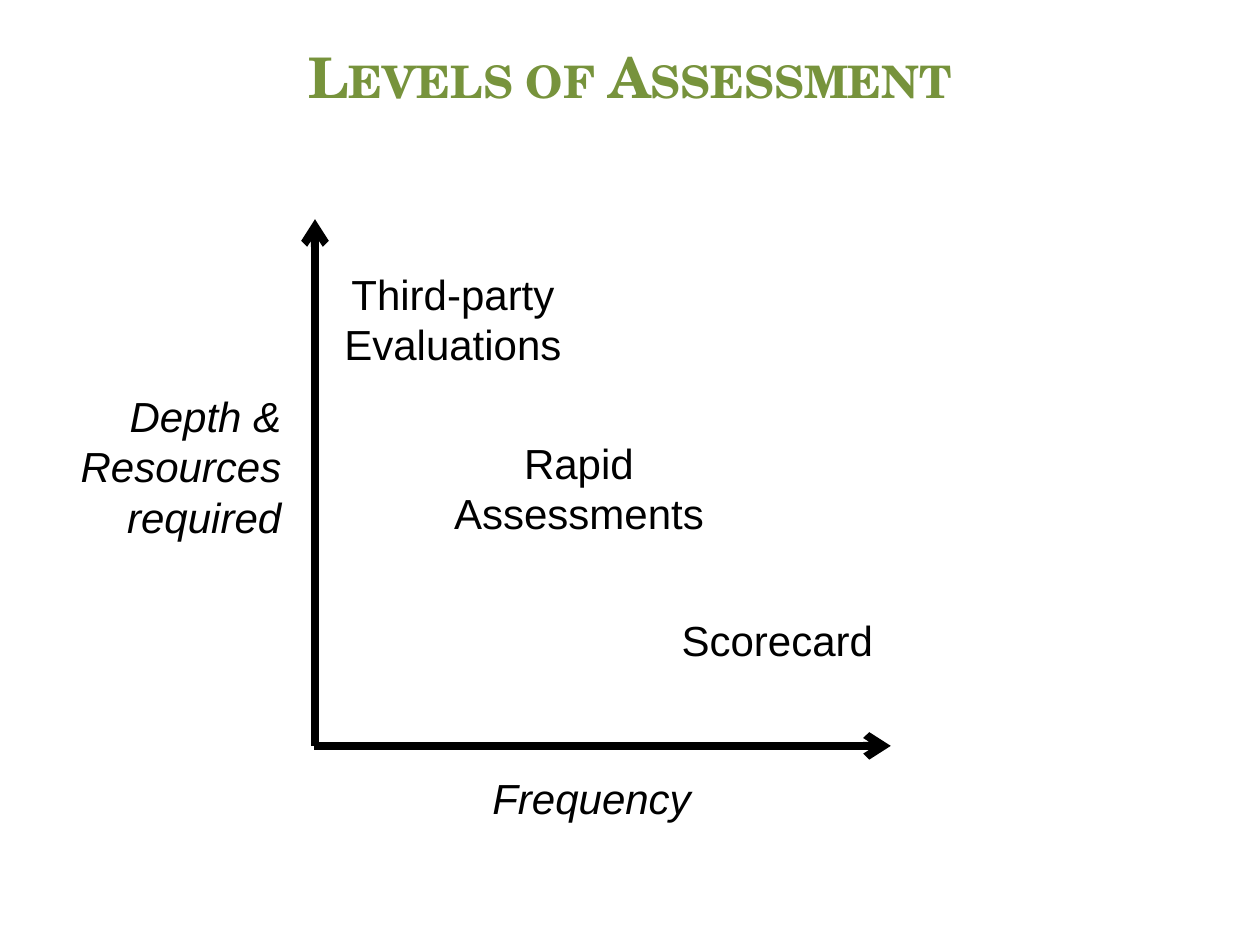
from dataclasses import dataclass

from pptx import Presentation
from pptx.dml.color import RGBColor as Color
from pptx.enum.shapes import MSO_CONNECTOR as Connector
from pptx.enum.text import MSO_ANCHOR as Anchor, MSO_AUTO_SIZE as AutoSize, PP_ALIGN as Align
from pptx.oxml.ns import qn
from pptx.util import Inches, Pt
from lxml.etree import SubElement


@dataclass(frozen=True)
class Theme:
    ink: Color = Color(0x00, 0x00, 0x00)
    green: Color = Color(0x77, 0x93, 0x3C)
    title_font: str = "TeX Gyre Schola"
    body_font: str = "Arial"
    title_size: Pt = Pt(32)
    body_size: Pt = Pt(24)
    axis_width: Pt = Pt(4.5)


@dataclass(frozen=True)
class Box:
    left: float
    top: float
    width: float
    height: float

    def inner(self, left, top, width, height):
        return Box(self.left + left, self.top + top, width, height)

    def placement(self):
        return {name: cells(getattr(self, name)) for name in ("left", "top", "width", "height")}


THEME = Theme()
COLUMNS, ROWS, CELL = 40, 30, 0.25
TITLE_BOX = Box(0, 0, COLUMNS, 3.68)
CHART_BOX = Box(10, 6.96, 18.28, 16.72)

LEVELS = [
    ("Third-party Evaluations", (0.32, 1.36, 8.12, 4.72)),
    ("Rapid Assessments", (3.44, 6.72, 9.88, 3.32)),
    ("Scorecard", (10.68, 12.36, 8, 2.68)),
]
AXIS_NAMES = [
    ("Depth & Resources required", (-8.24, 5.24, 7.56, 5.24)),
    ("Frequency", (4.76, 17.36, 7.56, 2)),
]
LEVEL_FORMAT = {"alignment": Align.CENTER, "space_before": Pt(0), "space_after": Pt(4)}
AXIS_FORMAT = {"alignment": Align.RIGHT}


def cells(count):
    return Inches(count * CELL)


def apply(target, values):
    for name, value in values.items():
        setattr(target, name, value)


def format_font(font, color, **values):
    apply(font, values)
    font.color.rgb = color


def add_title(slide, box, text):
    title = slide.shapes.title
    apply(title, box.placement())
    frame = title.text_frame
    apply(frame, {"text": text, "vertical_anchor": Anchor.BOTTOM,
                  "word_wrap": True, "auto_size": AutoSize.NONE})
    paragraph = frame.paragraphs[0]
    paragraph.alignment = Align.CENTER
    run = paragraph.runs[0]
    format_font(run.font, THEME.green, name=THEME.title_font, size=THEME.title_size, bold=True)
    run.font._element.set("cap", "small")


def add_label(slide, box, text, paragraph_format, italic, auto_size):
    label = slide.shapes.add_textbox(**box.placement())
    frame = label.text_frame
    apply(frame, {"text": text, "word_wrap": True, "auto_size": auto_size})
    paragraph = frame.paragraphs[0]
    apply(paragraph, paragraph_format)
    format_font(paragraph.runs[0].font, THEME.ink,
                name=THEME.body_font, size=THEME.body_size, italic=italic)


def add_axis(slide, start, end):
    axis = slide.shapes.add_connector(
        Connector.STRAIGHT, *(cells(value) for value in (*start, *end)))
    axis.line.width = THEME.axis_width
    axis.line.color.rgb = THEME.ink
    properties = axis._element.spPr
    SubElement(properties.find(qn("a:ln")), qn("a:tailEnd"), type="arrow")
    SubElement(properties, qn("a:effectLst"))


def add_level_chart(slide, box):
    bottom = box.top + box.height
    add_axis(slide, (box.left, bottom), (box.left, box.top))
    add_axis(slide, (box.left - 0.04, bottom), (box.left + box.width, bottom))
    for text, place in LEVELS:
        add_label(slide, box.inner(*place), text, LEVEL_FORMAT, False, AutoSize.NONE)
    for text, place in AXIS_NAMES:
        add_label(slide, box.inner(*place), text, AXIS_FORMAT, True, AutoSize.SHAPE_TO_FIT_TEXT)


def main():
    presentation = Presentation()
    apply(presentation, {"slide_width": cells(COLUMNS), "slide_height": cells(ROWS)})
    slide = presentation.slides.add_slide(presentation.slide_layouts.get_by_name("Title Only"))
    add_title(slide, TITLE_BOX, "Levels of Assessment")
    add_level_chart(slide, CHART_BOX)
    presentation.save("out.pptx")


if __name__ == "__main__":
    main()
